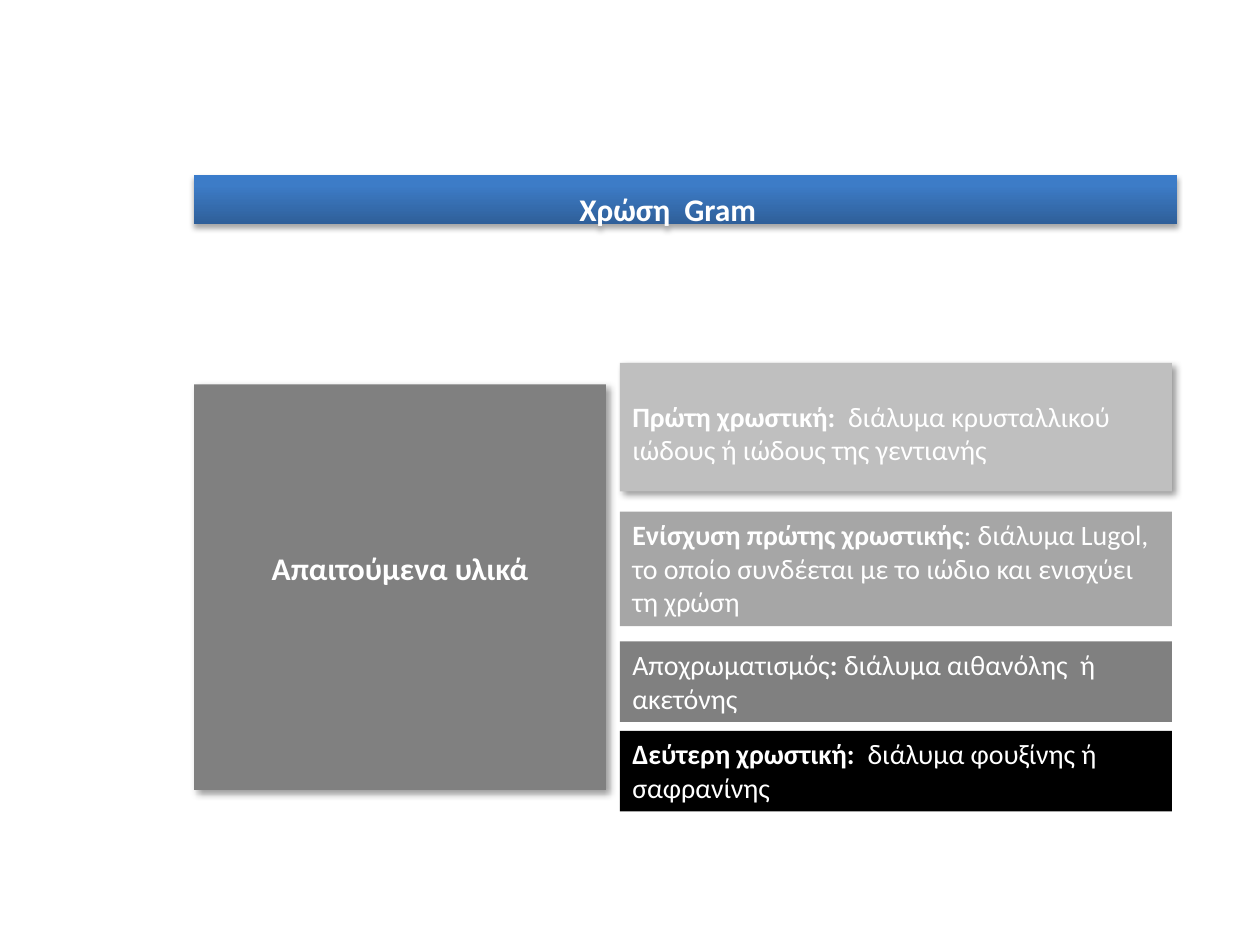
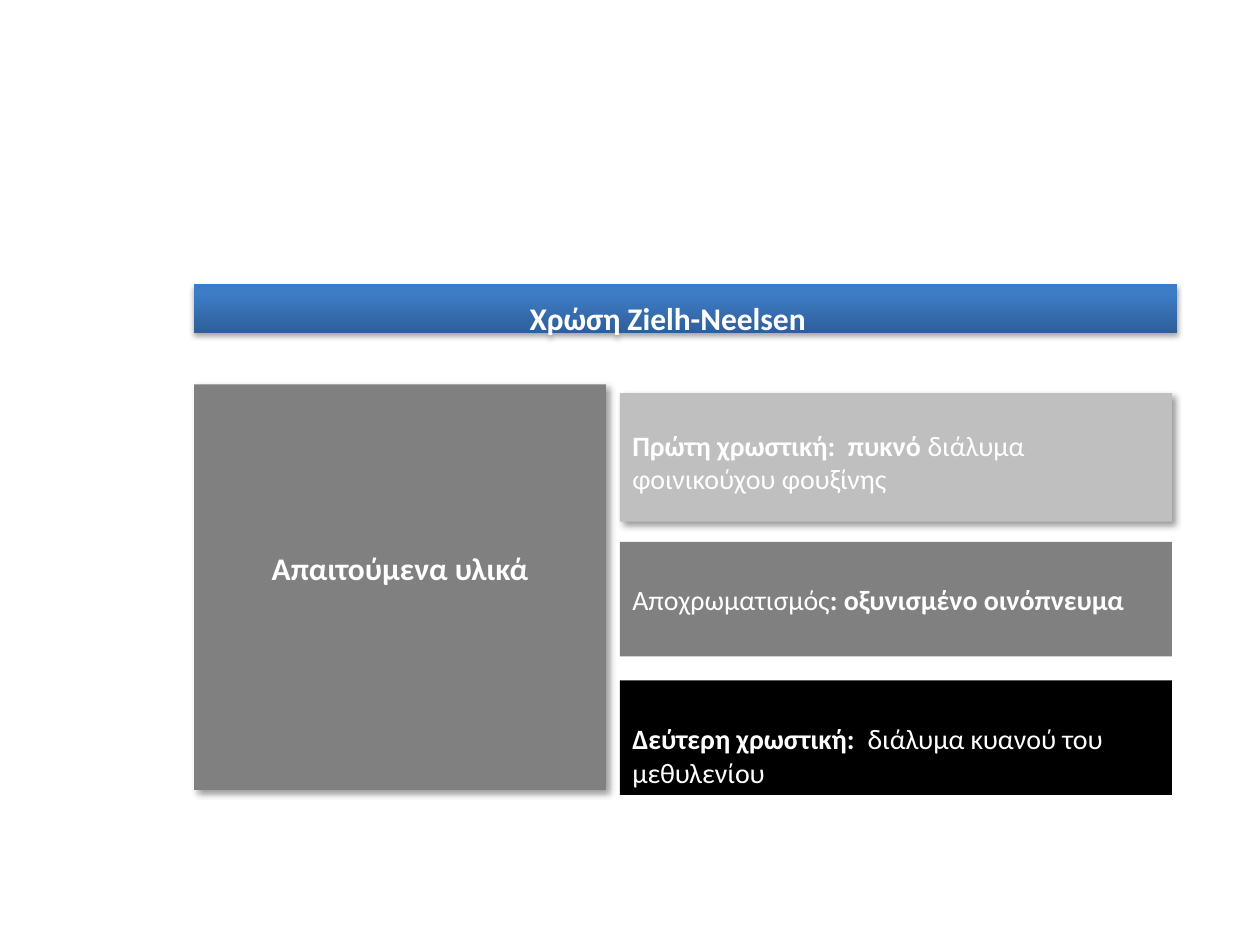
from dataclasses import dataclass

from lxml import etree
from pptx import Presentation
from pptx.dml.color import RGBColor
from pptx.enum.shapes import MSO_SHAPE
from pptx.enum.text import MSO_ANCHOR, MSO_AUTO_SIZE, PP_ALIGN
from pptx.oxml.ns import qn
from pptx.util import Emu, Inches, Pt

RECT = MSO_SHAPE.RECTANGLE
TOP, MIDDLE, BOTTOM = MSO_ANCHOR.TOP, MSO_ANCHOR.MIDDLE, MSO_ANCHOR.BOTTOM
LEFT, CENTER = PP_ALIGN.LEFT, PP_ALIGN.CENTER
NO_FIT = MSO_AUTO_SIZE.NONE

FONT = "Calibri"
COLORS = {
    "text": "FFFFFF", "first": "BFBFBF", "boost": "A6A6A6",
    "bleach": "808080", "second": "000000", "panel": "808080",
    "band_low": "2F5F99", "band_mid": "3D7CC7", "band_high": "3A7CCB",
    "shadow": "000000",
}
BAND_STOPS = ((0, "band_low"), (80, "band_mid"), (100, "band_high"))

SLIDE_W, SLIDE_H = Inches(10), Inches(7.5)
TITLE_ONLY = 5

# Shared geometry, in percent of the slide's width or height
MARGIN_X, BAND_W, BAND_H = 15.4, 78, 5.2
PANEL_W, PANEL_Y, PANEL_H = 32.7, 40.67, 42.93
STEP_X, STEP_W = 49.2, 43.8

Runs = list[tuple[str, bool]]


@dataclass(frozen=True)
class Shadow:
    alpha: int
    blur: float
    distance: float
    angle: int


BAND_SHADOW = Shadow(35, 3.1, 1.8, 90)
BOX_SHADOW = Shadow(40, 4, 3, 45)


@dataclass(frozen=True)
class Step:
    color: str
    y: float
    height: float
    runs: Runs
    anchor: MSO_ANCHOR = TOP
    inset_top: float = 0.05
    shadow: Shadow | None = None


@dataclass(frozen=True)
class Stain:
    title: str
    band_y: float
    steps: list[Step]


STAINS = [
    Stain("Χρώση  Gram", 18.53, [
        Step("first", 38.4, 13.6,
             [("Πρώτη χρωστική:  ", True),
              ("διάλυμα κρυσταλλικού ιώδους ή ιώδους της γεντιανής", False)],
             inset_top=0.29, shadow=BOX_SHADOW),
        Step("boost", 54.13, 12.13,
             [("Ενίσχυση πρώτης χρωστικής", True),
              (": διάλυμα Lugol, το οποίο συνδέεται με το ιώδιο "
               "και ενισχύει τη χρώση", False)]),
        Step("bleach", 67.87, 8.53,
             [("Αποχρωματισμός", False), (": ", True),
              ("διάλυμα αιθανόλης  ή ακετόνης", False)]),
        Step("second", 77.33, 8.53,
             [("Δεύτερη χρωστική:  ", True),
              ("διάλυμα φουξίνης ή σαφρανίνης", False)]),
    ]),
    Stain("Χρώση Ζielh-Neelsen", 30, [
        Step("first", 41.6, 13.6,
             [("Πρώτη χρωστική:  πυκνό ", True),
              ("διάλυμα φοινικούχου φουξίνης", False)],
             inset_top=0.28, shadow=BOX_SHADOW),
        Step("bleach", 57.33, 12.13,
             [("Αποχρωματισμός", False), (": οξυνισμένο οινόπνευμα", True)],
             anchor=MIDDLE),
        Step("second", 72, 12.13,
             [("Δεύτερη χρωστική:  ", True),
              ("διάλυμα κυανού του μεθυλενίου", False)],
             anchor=BOTTOM),
    ]),
]


def rgb(name: str) -> RGBColor:
    return RGBColor.from_string(COLORS[name])


def area(x: float, y: float, width: float, height: float) -> list[Emu]:
    """Turn percentages of the slide into left, top, width and height."""
    return [Emu(round(share * full / 100)) for share, full in
            ((x, SLIDE_W), (y, SLIDE_H), (width, SLIDE_W), (height, SLIDE_H))]


def write(shape, runs: Runs, *, size: float = 16, align=LEFT, anchor=TOP,
          top: float = 0.05, right: float = 0.1, bottom: float = 0.05) -> None:
    frame = shape.text_frame
    frame.word_wrap, frame.auto_size = True, NO_FIT
    frame.vertical_anchor = anchor
    frame.margin_left, frame.margin_right = Inches(0.1), Inches(right)
    frame.margin_top, frame.margin_bottom = Inches(top), Inches(bottom)
    paragraph = frame.paragraphs[0]
    paragraph.alignment = align
    for text, bold in runs:
        run = paragraph.add_run()
        run.text = text
        run.font.name, run.font.size, run.font.bold = FONT, Pt(size), bold
        run.font.color.rgb = rgb("text")


def add_color(parent, name: str):
    return etree.SubElement(parent, qn("a:srgbClr"), val=COLORS[name])


def cast_shadow(shape, shadow: Shadow | None) -> None:
    shape.shadow.inherit = False
    if shadow is None:
        return
    effects = shape._element.spPr.find(qn("a:effectLst"))
    outer = etree.SubElement(
        effects, qn("a:outerShdw"), blurRad=str(Pt(shadow.blur)),
        dist=str(Pt(shadow.distance)), dir=str(shadow.angle * 60000),
        algn="tl", rotWithShape="0")
    color = add_color(outer, "shadow")
    etree.SubElement(color, qn("a:alpha"), val=str(shadow.alpha * 1000))


def fill_band(band) -> None:
    band.fill.gradient()
    gradient = band._element.spPr.find(qn("a:gradFill"))
    for child in list(gradient):
        gradient.remove(child)
    stops = etree.SubElement(gradient, qn("a:gsLst"))
    for position, name in BAND_STOPS:
        stop = etree.SubElement(stops, qn("a:gs"), pos=str(position * 1000))
        add_color(stop, name)
    etree.SubElement(gradient, qn("a:lin"), ang=str(270 * 60000), scaled="0")


def add_band(slide, title: str, y: float) -> None:
    band = slide.shapes.title
    band.left, band.top, band.width, band.height = area(
        MARGIN_X, y, BAND_W, BAND_H)
    fill_band(band)
    cast_shadow(band, BAND_SHADOW)
    write(band, [(title, True)], size=18, align=CENTER,
          top=0.12, right=0.38, bottom=0)


def add_box(slide, place: list[Emu], color: str, shadow: Shadow | None):
    box = slide.shapes.add_shape(RECT, *place)
    box.fill.solid()
    box.fill.fore_color.rgb = rgb(color)
    box.line.fill.background()
    cast_shadow(box, shadow)
    return box


def add_stain(deck, stain: Stain) -> None:
    slide = deck.slides.add_slide(deck.slide_layouts[TITLE_ONLY])
    add_band(slide, stain.title, stain.band_y)

    # Materials panel
    panel = add_box(slide, area(MARGIN_X, PANEL_Y, PANEL_W, PANEL_H),
                    "panel", BOX_SHADOW)
    write(panel, [("Απαιτούμενα υλικά", True)], size=18, align=CENTER,
          top=1.31)

    # Staining steps
    for step in stain.steps:
        box = add_box(slide, area(STEP_X, step.y, STEP_W, step.height),
                      step.color, step.shadow)
        write(box, step.runs, anchor=step.anchor, top=step.inset_top)


def main() -> None:
    deck = Presentation()
    deck.slide_width, deck.slide_height = SLIDE_W, SLIDE_H
    for stain in STAINS:
        add_stain(deck, stain)
    deck.save("out.pptx")


if __name__ == "__main__":
    main()
